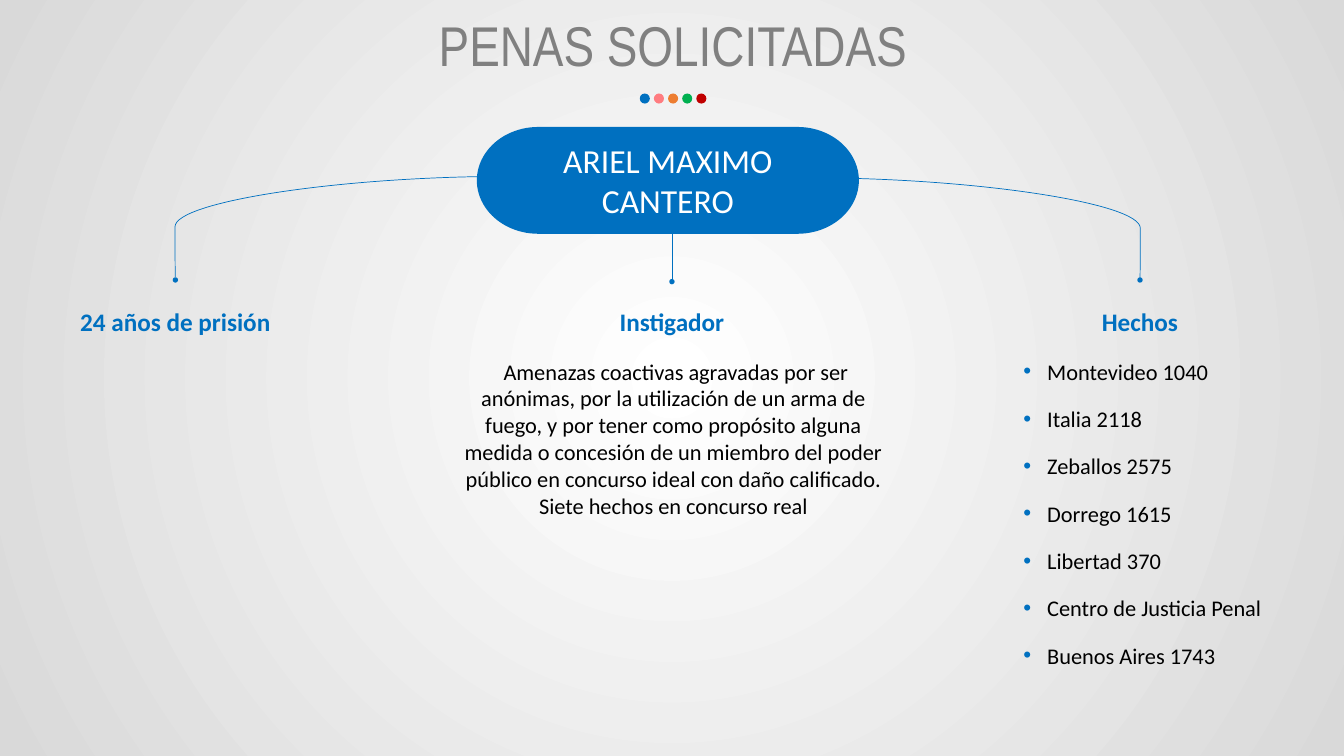
from dataclasses import dataclass

from lxml.etree import SubElement
from pptx import Presentation
from pptx.dml.color import RGBColor
from pptx.enum.shapes import MSO_CONNECTOR, MSO_SHAPE
from pptx.enum.text import MSO_ANCHOR, MSO_AUTO_SIZE, PP_ALIGN
from pptx.oxml.ns import qn
from pptx.slide import Slide
from pptx.util import Pt

BLUE = RGBColor(0x00, 0x70, 0xC0)
PINK = RGBColor(0xFF, 0x7C, 0x80)
ORANGE = RGBColor(0xED, 0x7D, 0x31)
GREEN = RGBColor(0x00, 0xB0, 0x50)
RED = RGBColor(0xC0, 0x00, 0x00)
BLACK = RGBColor(0, 0, 0)
WHITE = RGBColor(255, 255, 255)
GRAY = RGBColor(0x80, 0x80, 0x80)
SILVER = RGBColor(0xD9, 0xD9, 0xD9)

CENTERS = (125.3, 480, 814.3)
HEADS = ("24 años de prisión", "Instigador", "Hechos")
CRIME = (
    " Amenazas coactivas agravadas por ser anónimas, por la utilización de un "
    "arma de fuego, y por tener como propósito alguna medida o concesión de un "
    "miembro del poder público en concurso ideal con daño calificado.",
    "Siete hechos en concurso real",
)
PLACES = (
    "Montevideo 1040", "Italia 2118", "Zeballos 2575", "Dorrego 1615",
    "Libertad 370", "Centro de Justicia Penal", "Buenos Aires 1743",
)


@dataclass
class Board:
    slide: Slide
    font: str = "Calibri"
    color: RGBColor = BLUE
    weight: float = 0.5

    def backdrop(self, inner, outer):
        """Fill the background with a circular gradient."""
        fill = self.slide.background.fill
        fill.gradient()
        for stop, color, place in zip(fill.gradient_stops, (inner, outer), (0, 1)):
            stop.color.rgb = color
            stop.position = place
        grad = self.slide.element.find(".//" + qn("a:gradFill"))
        grad.remove(grad.find(qn("a:lin")))
        ring = SubElement(grad, qn("a:path"), {"path": "circle"})
        SubElement(ring, qn("a:fillToRect"), dict.fromkeys("ltrb", "50000"))

    def label(self, shape, lines, size, color, align=PP_ALIGN.CENTER,
              bold=False, font=None):
        """Put one paragraph per line into the shape and return them."""
        frame = shape.text_frame
        frame.word_wrap = True
        paras = []
        for i, line in enumerate(lines):
            para = frame.add_paragraph() if i else frame.paragraphs[0]
            para.alignment = align
            run = para.add_run()
            run.text = line
            run.font.name = font or self.font
            run.font.size = Pt(size)
            run.font.bold = bold
            run.font.color.rgb = color
            paras.append(para)
        return paras

    def place(self, holder, x, y, w, h):
        holder.left, holder.top, holder.width, holder.height = map(Pt, (x, y, w, h))
        holder.text_frame.auto_size = MSO_AUTO_SIZE.NONE

    def title(self, text, x, y, w, h):
        holder = self.slide.shapes.title
        self.place(holder, x, y, w, h)
        holder.text_frame.vertical_anchor = MSO_ANCHOR.BOTTOM
        para, = self.label(holder, [text], 40, GRAY, font="Arial Narrow")
        para.line_spacing = 0.9

    def bullets(self, lines, x, y, w, h, indent, gap):
        holder = self.slide.placeholders[1]
        self.place(holder, x, y, w, h)
        frame = holder.text_frame
        frame.margin_left = frame.margin_right = 0
        frame.margin_top = frame.margin_bottom = 0
        frame.vertical_anchor = MSO_ANCHOR.TOP
        for para in self.label(holder, lines, 16, BLACK, PP_ALIGN.LEFT):
            para.line_spacing = 1.0
            para.space_before = Pt(0)
            para.space_after = Pt(gap)
            props = para._p.get_or_add_pPr()
            props.set("marL", str(Pt(indent)))
            props.set("indent", str(-Pt(indent)))
            tint = SubElement(props, qn("a:buClr"))
            SubElement(tint, qn("a:srgbClr"), val=str(self.color))
            SubElement(props, qn("a:buFont"), typeface="Arial")
            SubElement(props, qn("a:buChar"), char="•")

    def text(self, lines, x, y, w, h, size, color, bold=False):
        box = self.slide.shapes.add_textbox(Pt(x), Pt(y), Pt(w), Pt(h))
        self.label(box, lines, size, color, bold=bold)

    def shape(self, kind, x, y, w, h, color=None):
        item = self.slide.shapes.add_shape(kind, Pt(x), Pt(y), Pt(w), Pt(h))
        item.shadow.inherit = False
        item.fill.solid()
        item.fill.fore_color.rgb = color or self.color
        item.line.fill.background()
        return item

    def dot(self, x, y, size, color=None):
        """Draw a dot around its centre."""
        self.shape(MSO_SHAPE.OVAL, x - size / 2, y - size / 2, size, size, color)

    def line(self, x1, y1, x2, y2, kind=MSO_CONNECTOR.STRAIGHT):
        link = self.slide.shapes.add_connector(kind, Pt(x1), Pt(y1), Pt(x2), Pt(y2))
        link.line.color.rgb = self.color
        link.line.width = Pt(self.weight)
        props = link.element.spPr
        SubElement(props, qn("a:effectLst"))
        if kind == MSO_CONNECTOR.CURVE:
            guides = props.find(".//" + qn("a:avLst"))
            SubElement(guides, qn("a:gd"), name="adj1", fmla="val 100100")


def main():
    deck = Presentation()
    deck.slide_width, deck.slide_height = Pt(960), Pt(540)
    board = Board(deck.slides.add_slide(deck.slide_layouts[1]))
    board.backdrop(WHITE, SILVER)
    board.title("PENAS SOLICITADAS", 162.7, 6.5, 635.8, 53.3)

    for i, color in enumerate((BLUE, PINK, ORANGE, GREEN, RED)):
        board.dot(460.6 + 10.1 * i, 70.4, 7.2, color)

    left, mid, right = CENTERS
    board.line(mid, 163.4, mid, 200)
    board.line(362.9, 126, left, 198, MSO_CONNECTOR.CURVE)
    board.line(576.7, 127, right, 199, MSO_CONNECTOR.CURVE)
    pill = board.shape(MSO_SHAPE.FLOWCHART_TERMINATOR, 340.6, 90.7, 272.9, 76.3)
    pill.text_frame.vertical_anchor = MSO_ANCHOR.MIDDLE
    board.label(pill, ["ARIEL MAXIMO CANTERO"], 24, WHITE)

    for x, y, head in zip(CENTERS, (200, 201.2, 200), HEADS):
        board.dot(x, y, 3.8)
        board.text([head], x - 98, 215.3, 196, 29, 18, BLUE, bold=True)

    board.text(CRIME, 324, 252, 314, 124, 16, BLACK)
    board.bullets(PLACES, 731, 255.6, 190, 236, indent=17, gap=14.6)
    deck.save("out.pptx")


if __name__ == "__main__":
    main()
